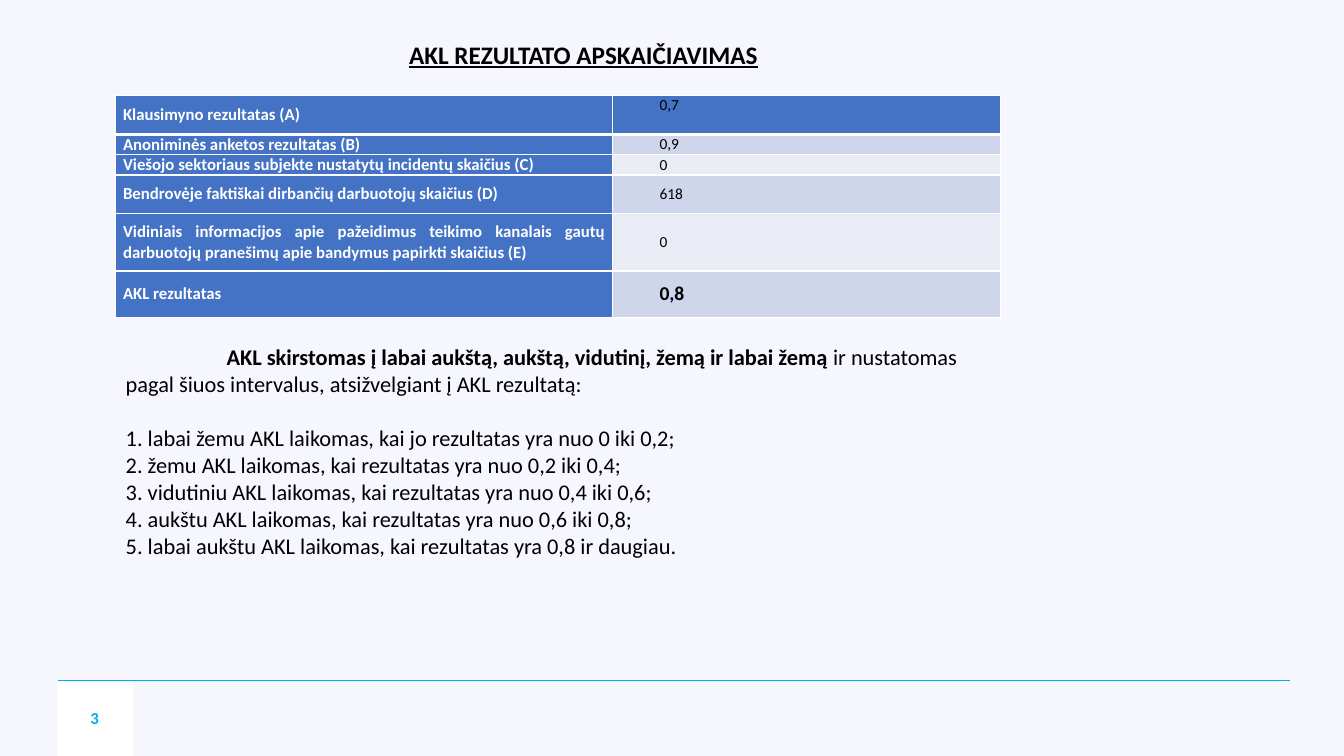
from lxml import etree
from pptx import Presentation
from pptx.dml.color import RGBColor
from pptx.enum.shapes import MSO_CONNECTOR, MSO_SHAPE
from pptx.enum.text import MSO_ANCHOR, MSO_AUTO_SIZE, PP_ALIGN
from pptx.oxml.ns import qn
from pptx.util import Cm, Pt

TOP, MIDDLE = MSO_ANCHOR.TOP, MSO_ANCHOR.MIDDLE
LEFT, CENTER, JUSTIFY = PP_ALIGN.LEFT, PP_ALIGN.CENTER, PP_ALIGN.JUSTIFY
GROW, FIXED = MSO_AUTO_SIZE.SHAPE_TO_FIT_TEXT, MSO_AUTO_SIZE.NONE
RECTANGLE, STRAIGHT = MSO_SHAPE.RECTANGLE, MSO_CONNECTOR.STRAIGHT

# Content
TITLE = "AKL REZULTATO APSKAIČIAVIMAS"
PAGE_NUMBER = "3"
RESULTS = [  # label, value, row height in cm
    ("Klausimyno rezultatas (A)", "0,7", 0.98),
    ("Anoniminės anketos rezultatas (B)", "0,9", 0.48),
    ("Viešojo sektoriaus subjekte nustatytų incidentų skaičius (C)", "0", 0.48),
    ("Bendrovėje faktiškai dirbančių darbuotojų skaičius (D)", "618", 0.97),
    ("Vidiniais informacijos apie pažeidimus teikimo kanalais gautų "
     "darbuotojų pranešimų apie bandymus papirkti skaičius (E)", "0", 1.45),
    ("AKL rezultatas", "0,8", 1.17),
]
INTRO_BOLD = "AKL skirstomas į labai aukštą, aukštą, vidutinį, žemą ir labai žemą"
INTRO_REST = " ir nustatomas pagal šiuos intervalus, atsižvelgiant į AKL rezultatą:"
LEVELS = [
    "1. labai žemu AKL laikomas, kai jo rezultatas yra nuo 0 iki 0,2;",
    "2. žemu AKL laikomas, kai rezultatas yra nuo 0,2 iki 0,4;",
    "3. vidutiniu AKL laikomas, kai rezultatas yra nuo 0,4 iki 0,6;",
    "4. aukštu AKL laikomas, kai rezultatas yra nuo 0,6 iki 0,8;",
    "5. labai aukštu AKL laikomas, kai rezultatas yra 0,8 ir daugiau.",
]

# Theme
THEME = {
    "font": "Calibri",
    "background": "F6F6FF", "white": "FFFFFF", "accent": "00AEEB",
    "header": "4472C4", "bands": ("E9EBF5", "CFD5EA"),
    "title": {"size": 18, "bold": True, "underline": True, "color": "000000"},
    "body": {"size": 16, "bold": False, "color": "000000"},
    "strong": {"size": 16, "bold": True, "color": "000000"},
    "label": {"size": 12, "bold": True, "color": "FFFFFF"},
    "value": {"size": 11, "bold": False, "color": "000000"},
    "total": {"size": 14, "bold": True, "color": "000000"},
    "number": {"size": 12, "bold": True, "color": "00AFEC"},
}

# Layout in cm
CONTENT_LEFT, CONTENT_WIDTH = 2.92, 22.3
LABEL_WIDTH = 12.52
FOOTER_LEFT, FOOTER_TOP, FOOTER_RIGHT = 1.45, 17.15, 32.51
NUMBER_SIDE = 1.9


def paint(fill, color):
    fill.solid()
    fill.fore_color.rgb = RGBColor.from_string(color)


def add_span(para, text, style):
    span = para.add_run()
    span.text = text
    formats = {"name": THEME["font"], **THEME[style]}
    formats["size"] = Pt(formats["size"])
    color = formats.pop("color")
    for name, value in formats.items():
        setattr(span.font, name, value)
    span.font.color.rgb = RGBColor.from_string(color)


def indent_first_line(para, length):
    para._p.get_or_add_pPr().set("indent", str(Cm(length)))


def add_text_box(page, place, fit=GROW, anchor=TOP):
    box = page.shapes.add_textbox(*map(Cm, place))
    frame = box.text_frame
    formats = {"word_wrap": True, "auto_size": fit, "vertical_anchor": anchor}
    for name, value in formats.items():
        setattr(frame, name, value)
    return frame


def set_borders(cell, widths):
    properties = cell._tc.get_or_add_tcPr()
    for index, (side, width) in enumerate(widths.items()):
        line = etree.Element(qn(f"a:ln{side}"), w=str(Pt(width)))
        solid = etree.SubElement(line, qn("a:solidFill"))
        etree.SubElement(solid, qn("a:srgbClr"), val=THEME["white"])
        properties.insert(index, line)


def fill_cell(cell, text, style, color, indent, anchor, borders):
    formats = {"margin_left": Cm(0.18), "margin_right": Cm(0.18),
               "margin_top": 0, "margin_bottom": 0, "vertical_anchor": anchor}
    for name, value in formats.items():
        setattr(cell, name, value)
    para = cell.text_frame.paragraphs[0]
    para.alignment = JUSTIFY
    indent_first_line(para, indent)
    add_span(para, text, style)
    paint(cell.fill, color)
    set_borders(cell, borders)


def add_footer(page):
    square = page.shapes.add_shape(
        RECTANGLE, *map(Cm, (FOOTER_LEFT, FOOTER_TOP, NUMBER_SIDE, NUMBER_SIDE)))
    square.shadow.inherit = False
    paint(square.fill, THEME["white"])
    square.line.fill.background()

    rule = page.shapes.add_connector(
        STRAIGHT, *map(Cm, (FOOTER_LEFT, FOOTER_TOP, FOOTER_RIGHT, FOOTER_TOP)))
    rule.line.color.rgb = RGBColor.from_string(THEME["accent"])
    rule.line.width = Pt(0.5)
    etree.SubElement(rule._element.spPr, qn("a:effectLst"))

    frame = add_text_box(page, (1.85, 17.63, 1.07, 0.94), FIXED, MIDDLE)
    para = frame.paragraphs[0]
    para.alignment = CENTER
    add_span(para, PAGE_NUMBER, "number")


def add_title(page):
    para = add_text_box(page, (10.06, 0.86, 10.82, 1.02)).paragraphs[0]
    para.alignment = LEFT
    add_span(para, TITLE, "title")


def add_results(page):
    height = sum(row[2] for row in RESULTS)
    table = page.shapes.add_table(
        len(RESULTS), 2, *map(Cm, (CONTENT_LEFT, 2.41, CONTENT_WIDTH, height))).table
    for column, width in zip(table.columns, (LABEL_WIDTH, CONTENT_WIDTH - LABEL_WIDTH)):
        column.width = Cm(width)
    last = len(RESULTS) - 1
    for index, (label, value, row_height) in enumerate(RESULTS):
        table.rows[index].height = Cm(row_height)
        # A thick rule separates the first row from the rest
        borders = {"L": 1, "R": 1, "T": 3 if index == 1 else 1, "B": 3 if index == 0 else 1}
        band = THEME["bands"][index % 2] if index else THEME["header"]
        style = "total" if index == last else "value"
        anchor = MIDDLE if index else TOP
        fill_cell(table.cell(index, 0), label, "label", THEME["header"], 0, MIDDLE, borders)
        fill_cell(table.cell(index, 1), value, style, band, 1, anchor, borders)


def add_explanation(page):
    frame = add_text_box(page, (CONTENT_LEFT, 8.53, CONTENT_WIDTH, 5.74))
    intro = frame.paragraphs[0]
    indent_first_line(intro, 2.54)
    add_span(intro, INTRO_BOLD, "strong")
    add_span(intro, INTRO_REST, "body")
    for index, level in enumerate(LEVELS):
        para = frame.add_paragraph()
        para.space_before = Pt(0 if index else 19.5)
        add_span(para, level, "body")


def main():
    deck = Presentation()
    deck.slide_width, deck.slide_height = Cm(33.87), Cm(19.05)
    page = deck.slides.add_slide(deck.slide_layouts[6])
    paint(page.background.fill, THEME["background"])
    add_footer(page)
    add_title(page)
    add_explanation(page)
    add_results(page)
    deck.save("out.pptx")


if __name__ == "__main__":
    main()
